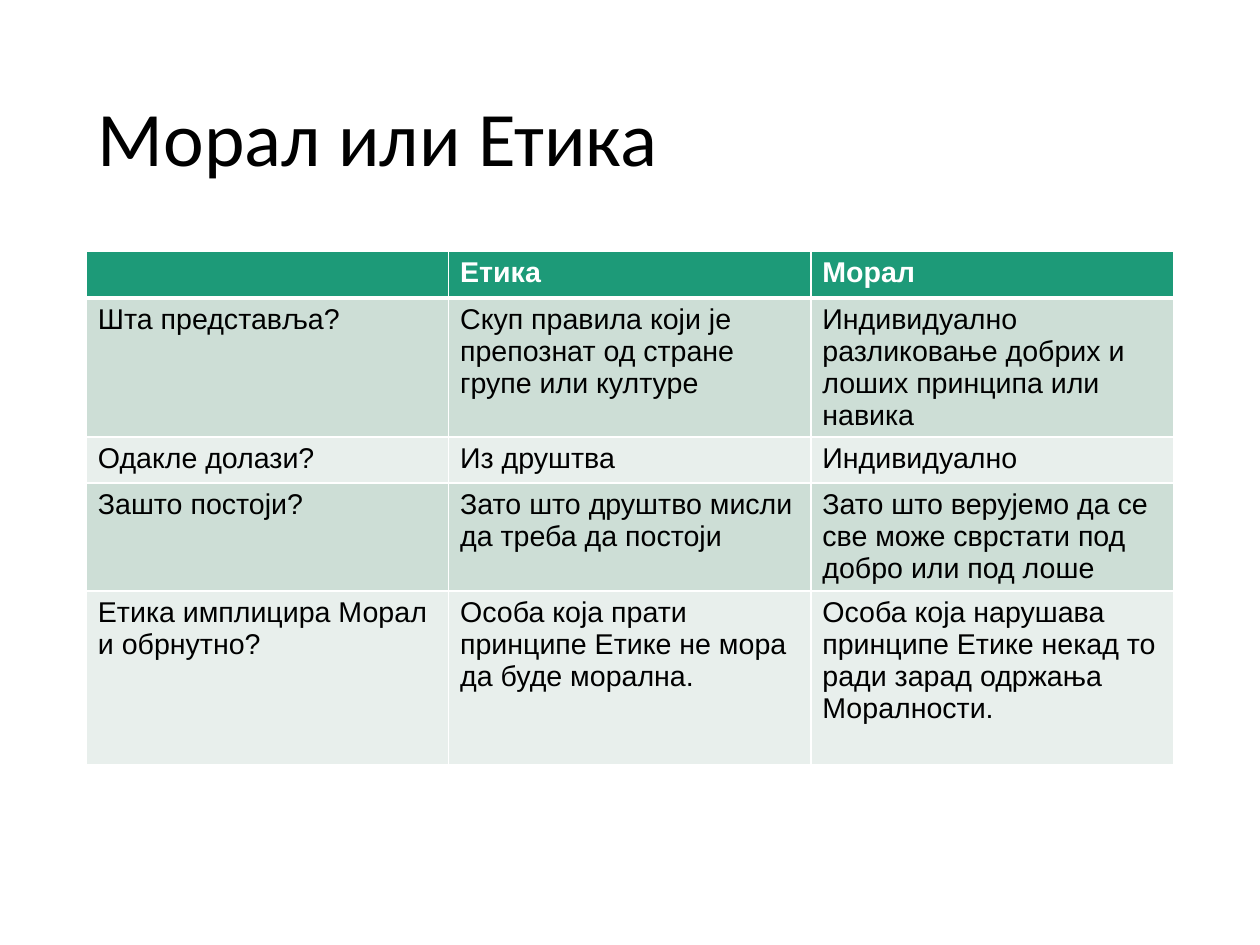
import pptx
import pptx.util
import pptx.dml.color
import pptx.enum.text
import pptx.oxml.ns
import lxml.etree

Pt = pptx.util.Pt
RGB = pptx.dml.color.RGBColor.from_string
qn = pptx.oxml.ns.qn
COLORS = {"header": "1D9A78", "odd": "CDDED6", "even": "E8EFEC",
          "white": "FFFFFF", "black": "000000"}
ROWS = [
    ("", "Етика", "Морал"),
    ("Шта представља?",
     "Скуп правила који је препознат од стране групе или културе",
     "Индивидуално разликовање добрих и лоших принципа или навика"),
    ("Одакле долази?", "Из друштва", "Индивидуално"),
    ("Зашто постоји?",
     "Зато што друштво мисли да треба да постоји",
     "Зато што верујемо да се све може сврстати под добро или под лоше"),
    ("Етика имплицира Морал и обрнутно?",
     "Особа која прати принципе Етике не мора да буде морална.",
     "Особа која нарушава принципе Етике некад то ради зарад одржања Моралности."),
]
HEIGHTS = [29, 87.8, 29, 68, 109.5]
LEFT, WIDTH = 54.5, 684.6


def style_runs(p, font, size, color, bold=False):
    for r in p.runs:
        r.font.name = font
        r.font.size = Pt(size)
        r.font.bold = bold
        r.font.color.rgb = RGB(COLORS[color])


def set_borders(cell, bottom):
    tcPr = cell._tc.get_or_add_tcPr()
    widths = {"a:lnL": 1, "a:lnR": 1, "a:lnT": 1, "a:lnB": bottom}
    for i, (tag, width) in enumerate(widths.items()):
        ln = lxml.etree.Element(qn(tag), w=str(Pt(width)))
        fill = lxml.etree.SubElement(ln, qn("a:solidFill"))
        lxml.etree.SubElement(fill, qn("a:srgbClr"), val=COLORS["white"])
        tcPr.insert(i, ln)


prs = pptx.Presentation()
prs.slide_width, prs.slide_height = Pt(793.75), Pt(595.25)
s = prs.slides.add_slide(prs.slide_layouts[5])

title = s.shapes.title
title.left, title.top, title.width, title.height = Pt(LEFT), Pt(31.7), Pt(WIDTH), Pt(115.2)
tf = title.text_frame
tf.text = "Морал или Етика"
tf.word_wrap = True
tf.auto_size = pptx.enum.text.MSO_AUTO_SIZE.NONE
tf.vertical_anchor = pptx.enum.text.MSO_ANCHOR.MIDDLE
p = tf.paragraphs[0]
p.alignment = pptx.enum.text.PP_ALIGN.LEFT
p.line_spacing = 0.9
style_runs(p, "Calibri", 48.5, "black")

table = s.shapes.add_table(len(ROWS), len(ROWS[0]), Pt(LEFT), Pt(158.3),
                           Pt(WIDTH), Pt(sum(HEIGHTS))).table
for i, row in enumerate(ROWS):
    table.rows[i].height = Pt(HEIGHTS[i])
    header = i == 0
    fill = "header" if header else "odd" if i % 2 else "even"
    for j, text in enumerate(row):
        cell = table.cell(i, j)
        cell.fill.solid()
        cell.fill.fore_color.rgb = RGB(COLORS[fill])
        set_borders(cell, 3 if header else 1)
        if text:
            cell.text_frame.text = text
            style_runs(cell.text_frame.paragraphs[0], "Arial", 18,
                       "white" if header else "black", header)

prs.save("out.pptx")
